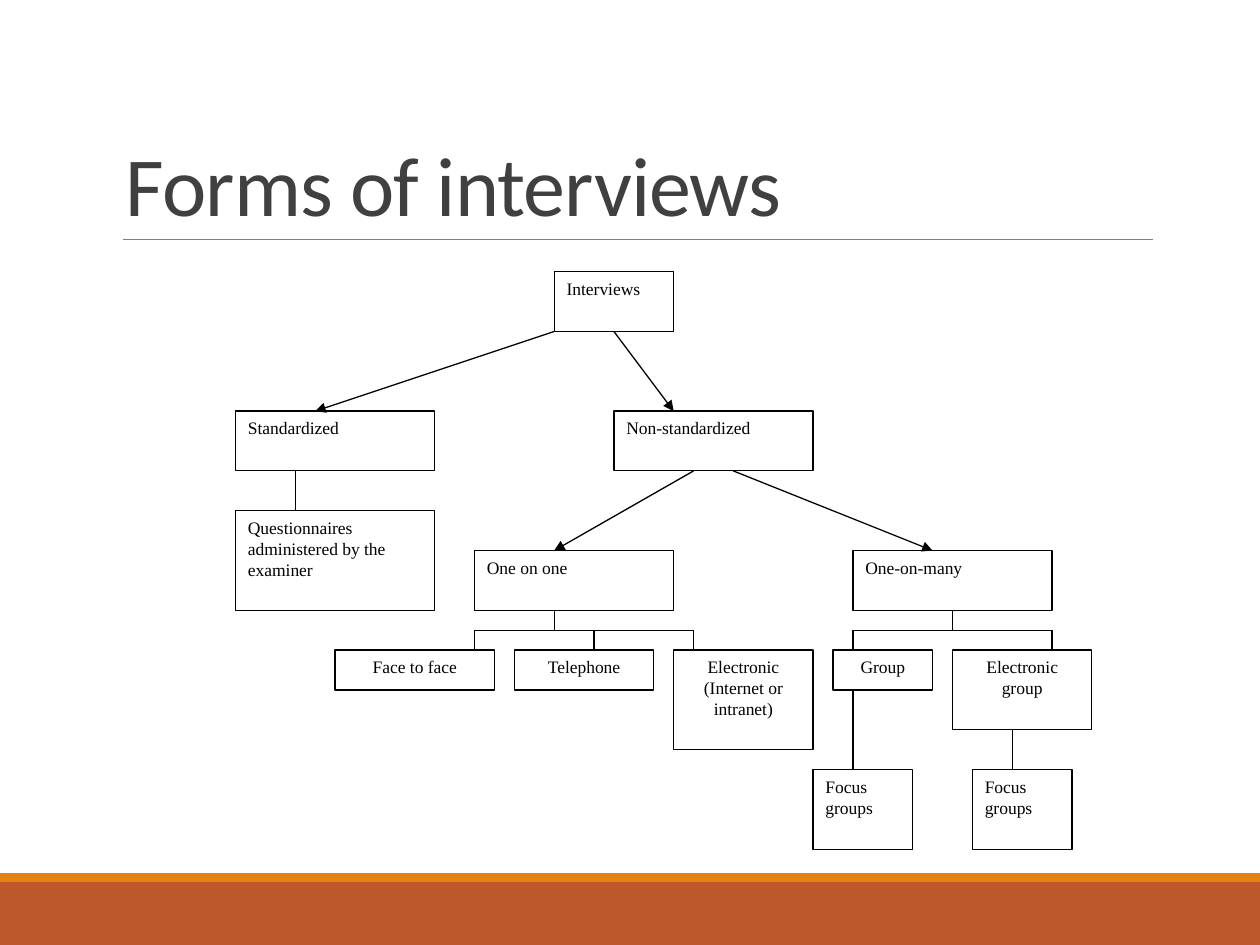
from pptx import Presentation
from pptx.dml.color import RGBColor
from pptx.enum import shapes, text
from pptx.oxml.ns import qn
from pptx.util import Pt
from lxml import etree

BLACK = RGBColor(0x00, 0x00, 0x00)
WHITE = RGBColor(0xFF, 0xFF, 0xFF)
DARK = RGBColor(0x40, 0x40, 0x40)
GRAY = RGBColor(0x80, 0x80, 0x80)
ORANGE = RGBColor(0xE4, 0x83, 0x12)
RUST = RGBColor(0xBD, 0x58, 0x2C)

LEFT, TOP, UNIT = 134.6, 155.3, 11.38

TITLE = "Forms of interviews"
BANDS = [(504, 36, RUST), (499, 5, ORANGE)]

LEFT_BOXES = [
    ("Interviews", 16, 0, 6, 3),
    ("Standardized", 0, 7, 10, 3),
    ("Non-standardized", 19, 7, 10, 3),
    ("Questionnaires administered by the examiner", 0, 12, 10, 5),
    ("One on one", 12, 14, 10, 3),
    ("One-on-many", 31, 14, 10, 3),
    ("Focus\ngroups", 29, 25, 5, 4),
    ("Focus\ngroups", 37, 25, 5, 4),
]
CENTERED_BOXES = [
    ("Face to face", 5, 19, 8, 2),
    ("Telephone", 14, 19, 7, 2),
    ("Electronic (Internet or intranet)", 22, 19, 7, 5),
    ("Group", 30, 19, 5, 2),
    ("Electronic group", 36, 19, 7, 4),
]
ARROWS = [
    (16, 3, 4, 7),
    (19, 3, 22, 7),
    (23, 10, 16, 14),
    (25, 10, 35, 14),
]
LINKS = [(3, 10, 3, 12), (31, 21, 31, 25), (39, 23, 39, 25)]
BRANCHES = [(16, [12, 18, 23]), (36, [31, 41])]
PARENT_BOTTOM, BRANCH_LEVEL, CHILD_TOP = 17, 18, 19


def grid(column, row):
    return Pt(LEFT + column * UNIT), Pt(TOP + row * UNIT)


def add_line(page, start, end, color=BLACK, width=0.75, arrow=False):
    line = page.shapes.add_connector(shapes.MSO_CONNECTOR.STRAIGHT, *start, *end)
    line.line.color.rgb = color
    line.line.width = Pt(width)
    if arrow:
        head = etree.SubElement(line.line._get_or_add_ln(), qn("a:tailEnd"))
        head.set("type", "triangle")
    etree.SubElement(line._element.spPr, qn("a:effectLst"))


def add_rectangle(page, left, top, width, height, fill):
    box = page.shapes.add_shape(
        shapes.MSO_SHAPE.RECTANGLE, left, top, width, height)
    box.shadow.inherit = False
    box.fill.solid()
    box.fill.fore_color.rgb = fill
    box.line.fill.background()
    return box


def add_box(page, label, column, row, columns, rows, alignment):
    box = add_rectangle(page, *grid(column, row),
                        Pt(columns * UNIT), Pt(rows * UNIT), WHITE)
    box.line.color.rgb = BLACK
    box.line.width = Pt(0.75)
    frame = box.text_frame
    frame.word_wrap = True
    frame.vertical_anchor = text.MSO_ANCHOR.TOP
    frame.text = label
    for para in frame.paragraphs:
        para.alignment = alignment
        para.font.name = "Times New Roman"
        para.font.size = Pt(10)
        para.font.color.rgb = BLACK


def add_title(page):
    box = page.shapes.add_textbox(Pt(64.8), Pt(22.3), Pt(594), Pt(114.5))
    frame = box.text_frame
    frame.word_wrap = True
    frame.vertical_anchor = text.MSO_ANCHOR.BOTTOM
    para = frame.paragraphs[0]
    para.line_spacing = 0.85
    para.font.name = "Calibri"
    para.font.size = Pt(48)
    para.font.color.rgb = DARK
    span = para.add_run()
    span.text = TITLE
    span._r.get_or_add_rPr().set("spc", "-50")


def main():
    deck = Presentation()
    deck.slide_width, deck.slide_height = Pt(720), Pt(540)
    page = deck.slides.add_slide(deck.slide_layouts[6])

    for top, height, color in BANDS:
        add_rectangle(page, 0, Pt(top), deck.slide_width, Pt(height), color)
    add_line(page, (Pt(70.5), Pt(136.8)), (Pt(658.8), Pt(136.8)), GRAY, 0.5)
    add_title(page)

    for box in LEFT_BOXES:
        add_box(page, *box, text.PP_ALIGN.LEFT)
    for box in CENTERED_BOXES:
        add_box(page, *box, text.PP_ALIGN.CENTER)

    links = list(LINKS)
    for parent, children in BRANCHES:
        links.append((parent, PARENT_BOTTOM, parent, BRANCH_LEVEL))
        links.append((children[0], BRANCH_LEVEL, children[-1], BRANCH_LEVEL))
        links += [(child, BRANCH_LEVEL, child, CHILD_TOP) for child in children]
    for lines, arrow in ((ARROWS, True), (links, False)):
        for x1, y1, x2, y2 in lines:
            add_line(page, grid(x1, y1), grid(x2, y2), arrow=arrow)

    deck.save("out.pptx")


if __name__ == "__main__":
    main()
